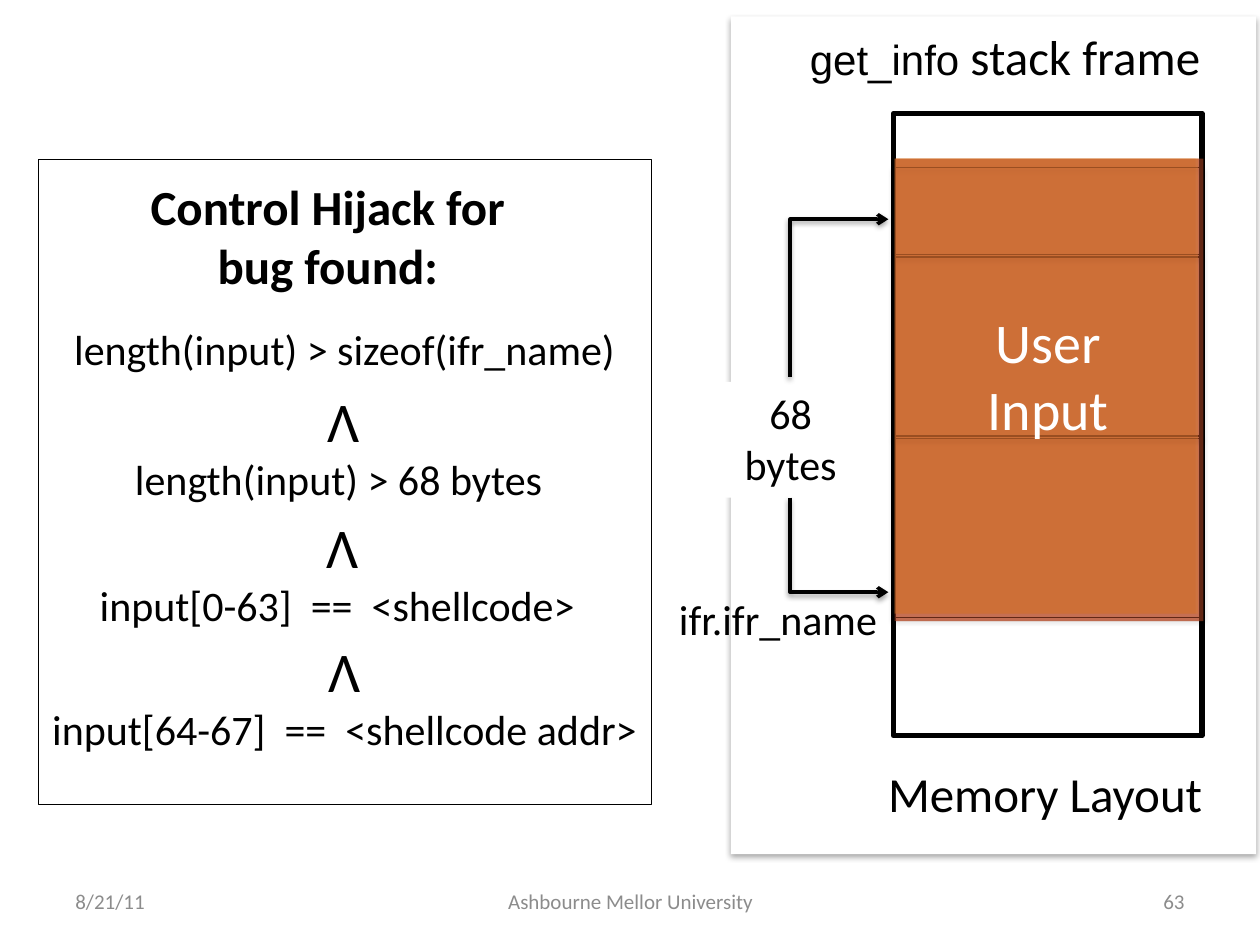
from pptx import Presentation
from pptx import util as u
from pptx.dml.color import RGBColor
from pptx.enum import shapes, text
from pptx.oxml.ns import qn
from lxml import etree

COLORS = {"ink": "000000", "paper": "FFFFFF", "muted": "8C8C8C",
          "amber": "FFB03B", "rust": "B64926"}
COLS, ROWS = 100, 75
LEFT, CENTER, RIGHT = text.PP_ALIGN.LEFT, text.PP_ALIGN.CENTER, text.PP_ALIGN.RIGHT


class Deck:
    def __init__(self):
        self.prs = Presentation()
        self.prs.slide_width, self.prs.slide_height = u.Inches(10), u.Inches(7.5)
        self.s = self.prs.slides.add_slide(self.prs.slide_layouts[5])
        self.font = "Calibri"

    def x(self, cols):
        return int(self.prs.slide_width * cols / COLS)

    def y(self, rows):
        return int(self.prs.slide_height * rows / ROWS)

    def box(self, left, top, width, height):
        return self.x(left), self.y(top), self.x(width), self.y(height)

    def color(self, name):
        return RGBColor.from_string(COLORS[name])

    def shade(self, effects, alpha=35, dist=1.8):
        shadow = etree.SubElement(effects, qn("a:outerShdw"), blurRad=str(u.Pt(3.1)),
                                  dist=str(u.Pt(dist)), dir="5400000", rotWithShape="0")
        clr = etree.SubElement(shadow, qn("a:srgbClr"), val=COLORS["ink"])
        etree.SubElement(clr, qn("a:alpha"), val=str(alpha * 1000))

    def rect(self, at, fill=None, alpha=None, line=None, shadow=False):
        sp = self.s.shapes.add_shape(shapes.MSO_SHAPE.RECTANGLE, *self.box(*at))
        sp.shadow.inherit = False
        if fill:
            sp.fill.solid()
            sp.fill.fore_color.rgb = self.color(fill)
        else:
            sp.fill.background()
        if alpha:
            clr = sp._element.spPr.find(".//" + qn("a:srgbClr"))
            etree.SubElement(clr, qn("a:alpha"), val=str(alpha * 1000))
        if line:
            sp.line.color.rgb = self.color("ink")
            sp.line.width = u.Pt(line)
        else:
            sp.line.fill.background()
        if shadow:
            self.shade(sp._element.spPr.find(qn("a:effectLst")))
        return sp

    def set_text(self, sp, paragraphs, align=LEFT, color="ink", bold=False,
                 anchor=text.MSO_ANCHOR.TOP):
        tf = sp.text_frame
        tf.word_wrap = True
        tf.auto_size = text.MSO_AUTO_SIZE.NONE
        tf.vertical_anchor = anchor
        for i, runs in enumerate(paragraphs):
            p = tf.add_paragraph() if i else tf.paragraphs[0]
            p.alignment = align
            for words, size, *font in runs:
                r = p.add_run()
                r.text = words
                r.font.size = u.Pt(size)
                r.font.name = font[0] if font else self.font
                r.font.bold = bold
                r.font.color.rgb = self.color(color)

    def label(self, at, *paragraphs, **style):
        sp = self.s.shapes.add_textbox(*self.box(*at))
        self.set_text(sp, paragraphs, **style)

    def title(self, at, words, size):
        sp = self.s.shapes.title
        sp.left, sp.top, sp.width, sp.height = self.box(*at)
        self.set_text(sp, [[(words, size)]], align=CENTER, bold=True)
        self.s.shapes._spTree.append(sp._element)

    def elbow(self, start, end):
        (x1, y1), (x2, y2) = [(self.x(a), self.y(b)) for a, b in (start, end)]
        cx, cy = (x1 + x2) // 2, (y1 + y2) // 2
        half_w, half_h = abs(y2 - y1) // 2, (x2 - x1) // 2
        up = 1 if y2 < y1 else -1
        c = self.s.shapes.add_connector(
            shapes.MSO_CONNECTOR.ELBOW, cx + half_w, cy + up * half_h,
            cx - half_w, cy - up * half_h)
        c.line.color.rgb = self.color("ink")
        c.line.width = u.Pt(2)
        spPr = c._element.spPr
        spPr.find(qn("a:prstGeom")).set("prst", "bentConnector2")
        spPr.find(qn("a:xfrm")).set("rot", "5400000" if up > 0 else "16200000")
        etree.SubElement(spPr.find(qn("a:ln")), qn("a:tailEnd"), type="arrow")
        self.shade(etree.SubElement(spPr, qn("a:effectLst")), alpha=38, dist=1.6)


def user_input(d, left):
    d.rect((left, 12.6, 24.1, 36.1), "amber", alpha=48)
    d.rect((left, 12.6, 24.5, 36.7), "rust", alpha=54)


def main():
    d = Deck()
    d.rect((58, 1.3, 41.7, 66.5), "paper", shadow=True)
    user_input(d, 70.8)

    for left, width, words, align in [(5, 23.3, "8/21/11", LEFT),
                                      (34.2, 31.7, "Ashbourne Mellor University", CENTER),
                                      (71.7, 23.3, "63", RIGHT)]:
        d.label((left, 69.5, width, 4), [(words, 12)], align=align, color="muted",
                anchor=text.MSO_ANCHOR.MIDDLE)

    offset = d.rect((56.8, 30.3, 11.9, 9.2), "paper")
    d.set_text(offset, [[("68 bytes", 24)]], align=CENTER)
    d.elbow((62.7, 29.9), (70.5, 17.4))
    d.elbow((62.7, 39.5), (70.5, 47))
    d.label((69.5, 60.1, 29, 6), [("Memory Layout", 28)])

    d.rect((70.9, 9, 24.5, 49.4), line=3)
    for top, height in [(13.3, 6.9), (20.4, 14.2), (34.8, 14.2)]:
        d.rect((70.9, top, 24.5, height), line=0.75, shadow=True)
    user_input(d, 71)

    d.label((63.3, 1.6, 36.7, 6), [("get_info", 24, "Arial"), (" stack frame", 28)])
    d.label((74.6, 23.9, 17.2, 11.8), [("User Input", 32)], align=CENTER, color="paper")
    d.label((52.9, 46.6, 19.6, 5), [("ifr.ifr_name", 24)])

    d.rect((3, 12.6, 48.7, 51.2), "paper", line=0.25)
    d.title((8.9, 13.5, 34.2, 10.4), "Control Hijack for bug found:", 28)
    for left, top, width, condition in [
            (6.4, 30.2, 41.7, "length(input) > 68 bytes "),
            (6.3, 40.2, 41.7, "input[0-63]  ==  <shellcode> "),
            (3, 50, 48.7, "input[64-67]  ==  <shellcode addr> ")]:
        d.label((left, top, width, 10.4), [("Λ", 32)], [(condition, 24)], align=CENTER)
    d.label((3, 25.2, 48.7, 5), [("length(input) > sizeof(ifr_name)", 24)], align=CENTER)

    d.prs.save("out.pptx")


if __name__ == "__main__":
    main()
